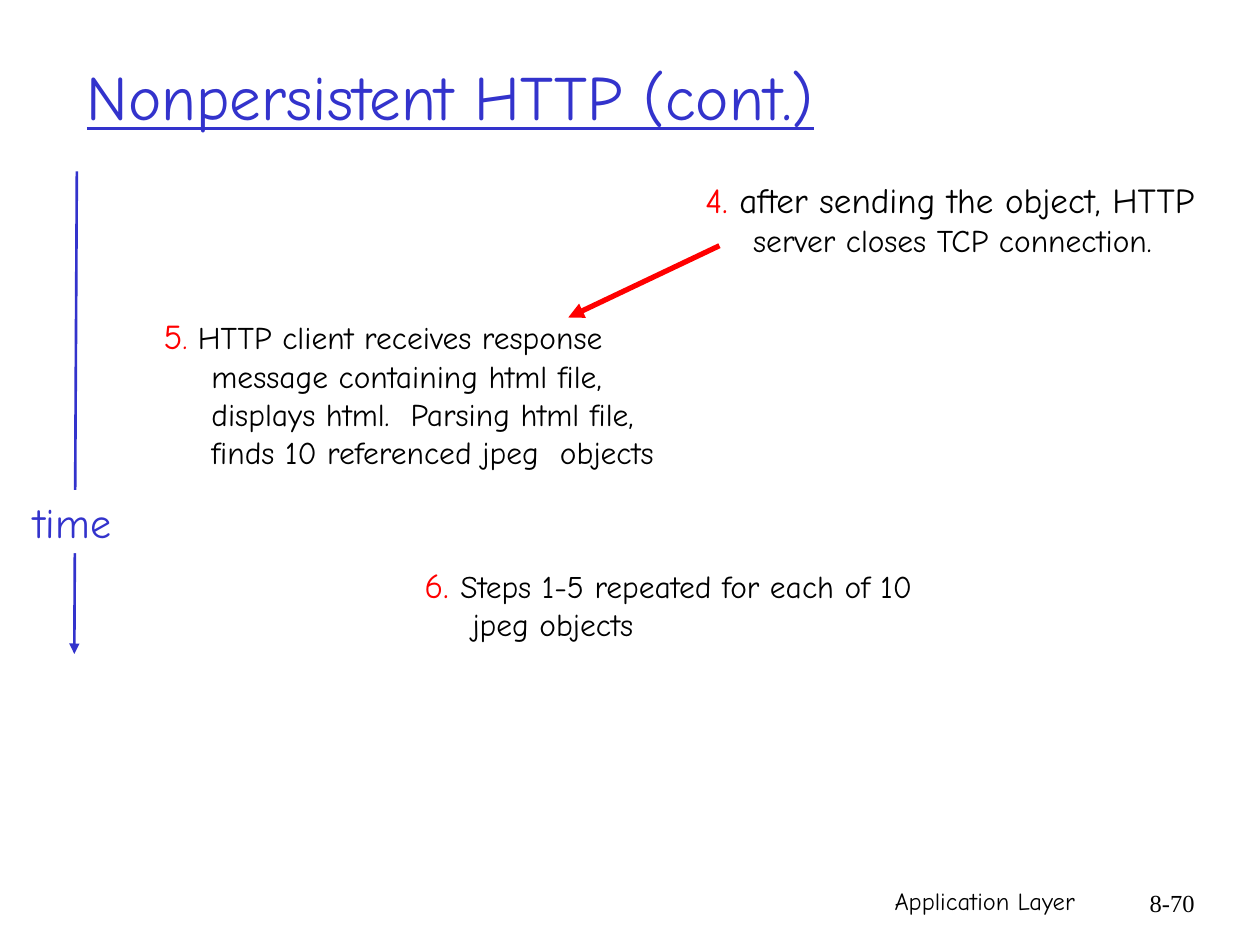
from dataclasses import dataclass

from lxml import etree
from pptx import Presentation
from pptx import util as u
from pptx.dml.color import RGBColor
from pptx.enum import shapes, text
from pptx.oxml import ns


@dataclass(frozen=True)
class Theme:
    blue: RGBColor = RGBColor(0x33, 0x33, 0xCC)
    red: RGBColor = RGBColor(0xFF, 0, 0)
    black: RGBColor = RGBColor(0, 0, 0)
    white: RGBColor = RGBColor(0xFF, 0xFF, 0xFF)
    font: str = "Comic Neue"
    number_font: str = "Times New Roman"
    title: int = 36
    label: int = 24
    lead: int = 20
    body: int = 18
    footer: int = 14
    hanging: float = 0.38


T = Theme()


@dataclass(frozen=True)
class Run:
    text: str
    size: int = T.body
    color: RGBColor = T.black
    font: str = T.font
    underline: bool = False


@dataclass(frozen=True)
class TextBlock:
    box: tuple[float, float, float, float]
    runs: tuple[Run, ...]
    align: text.PP_ALIGN = text.PP_ALIGN.LEFT
    hanging: float = 0


@dataclass(frozen=True)
class Arrow:
    start: tuple[float, float]
    end: tuple[float, float]
    color: RGBColor
    width: float


STEPS = (
    TextBlock((1.2, 2.45, 4.17, 1.68), (
        Run("5", T.lead, T.red),
        Run(".", T.body, T.red),
        Run(" HTTP client receives response message containing html file, "
            "displays html.  Parsing html file, finds 10 referenced jpeg  objects"),
    ), hanging=T.hanging),
    TextBlock((3.27, 4.42, 4.17, 0.73), (
        Run("6. ", T.lead, T.red),
        Run("Steps 1-5 repeated for each of 10 jpeg objects"),
    ), hanging=T.hanging),
    TextBlock((5.5, 1.37, 4.17, 1.27), (
        Run("4.", T.lead, T.red),
        Run(" after sending the object, HTTP", T.lead),
        Run(" server closes TCP connection."),
    ), hanging=T.hanging),
)
FOOTERS = (
    TextBlock((5.46, 6.98, 3.17, 0.5), (Run("Application Layer", T.footer),),
              text.PP_ALIGN.RIGHT),
    TextBlock((8.8, 7, 0.78, 0.5), (Run("8-70", T.footer, font=T.number_font),),
              text.PP_ALIGN.RIGHT),
)
ARROWS = (
    Arrow((0.61, 1.36), (0.59, 5.19), T.blue, 1.5),
    Arrow((5.71, 1.95), (4.51, 2.52), T.red, 3),
)


def add_runs(p, runs: tuple[Run, ...]) -> None:
    for run in runs:
        r = p.add_run()
        r.text = run.text
        r.font.name = run.font
        r.font.size = u.Pt(run.size)
        r.font.color.rgb = run.color
        if run.underline:
            r.font.underline = True


def add_text(s, block: TextBlock) -> None:
    sp = s.shapes.add_textbox(*map(u.Inches, block.box))
    tf = sp.text_frame
    tf.word_wrap = True
    p = tf.paragraphs[0]
    p.alignment = block.align
    if block.hanging:
        pPr = p._p.get_or_add_pPr()
        pPr.set("marL", str(u.Inches(block.hanging)))
        pPr.set("indent", str(-u.Inches(block.hanging)))
    add_runs(p, block.runs)


def add_arrow(s, arrow: Arrow) -> None:
    ends = map(u.Inches, arrow.start + arrow.end)
    cx = s.shapes.add_connector(shapes.MSO_CONNECTOR.STRAIGHT, *ends)
    cx.line.color.rgb = arrow.color
    cx.line.width = u.Pt(arrow.width)
    etree.SubElement(cx.line._get_or_add_ln(), ns.qn("a:tailEnd"), type="triangle")
    etree.SubElement(cx._element.spPr, ns.qn("a:effectLst"))


def set_title(s) -> None:
    sp = s.shapes.title
    sp.left, sp.top, sp.width, sp.height = map(u.Inches, (0.59, 0.28, 8.5, 0.95))
    tf = sp.text_frame
    tf.auto_size = text.MSO_AUTO_SIZE.NONE
    tf.vertical_anchor = text.MSO_ANCHOR.MIDDLE
    p = tf.paragraphs[0]
    p.alignment = text.PP_ALIGN.LEFT
    add_runs(p, (Run("Nonpersistent HTTP (cont.)", T.title, T.blue, underline=True),))


def add_time_label(s) -> None:
    """Label the time axis with a white box that interrupts its line."""
    sp = s.shapes.add_shape(shapes.MSO_SHAPE.RECTANGLE,
                            *map(u.Inches, (0.13, 3.89, 0.89, 0.5)))
    sp.shadow.inherit = False
    sp.fill.solid()
    sp.fill.fore_color.rgb = T.white
    sp.line.fill.background()
    tf = sp.text_frame
    tf.word_wrap = False
    tf.auto_size = text.MSO_AUTO_SIZE.SHAPE_TO_FIT_TEXT
    tf.vertical_anchor = text.MSO_ANCHOR.TOP
    p = tf.paragraphs[0]
    p.alignment = text.PP_ALIGN.CENTER
    add_runs(p, (Run("time", T.label, T.blue),))


def main() -> None:
    prs = Presentation()
    prs.slide_width, prs.slide_height = u.Inches(10), u.Inches(7.5)
    s = prs.slides.add_slide(prs.slide_layouts.get_by_name("Title Only"))
    set_title(s)
    for block in FOOTERS + STEPS:
        add_text(s, block)
    for arrow in ARROWS:
        add_arrow(s, arrow)
    add_time_label(s)
    prs.save("out.pptx")


if __name__ == "__main__":
    main()
